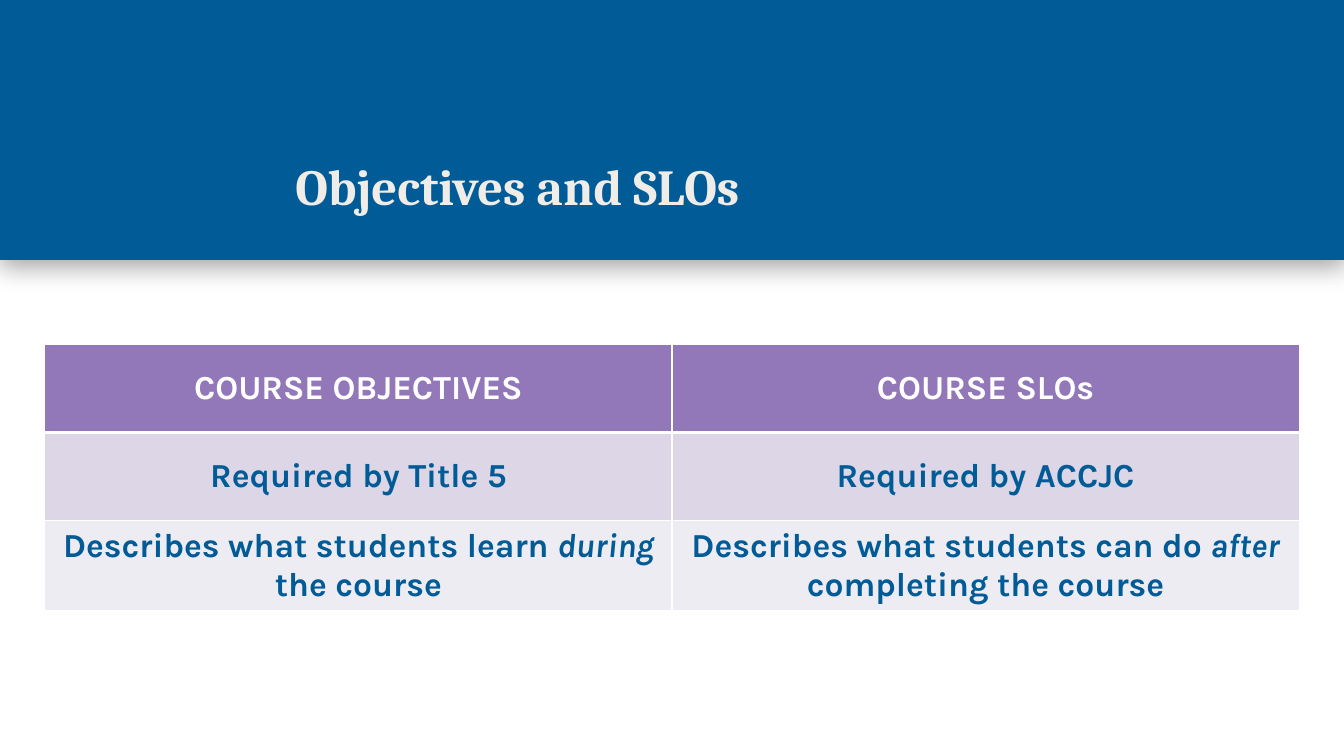
from lxml import etree
from pptx import Presentation
from pptx import util as u
from pptx.dml.color import RGBColor
from pptx.enum import shapes, text
from pptx.oxml import parse_xml
from pptx.oxml.ns import nsdecls, qn

COLORS = {
    "blue": "005B96",
    "cream": "F0ECE8",
    "white": "FFFFFF",
    "black": "000000",
    "purple": "9277B9",
    "lilac": "DCD6E6",
    "pale": "EEECF3",
}
WIDTH, HEIGHT = 960, 540

# Each cell is a list of (wording, italic) spans.
ROWS = [
    [[("COURSE OBJECTIVES", False)], [("COURSE SLOs", False)]],
    [[("Required by Title 5", False)], [("Required by ACCJC", False)]],
    [
        [("Describes what students learn ", False), ("during", True),
         (" the course", False)],
        [("Describes what students can do ", False), ("after", True),
         (" completing the course", False)],
    ],
]
ROW_STYLES = [("purple", "white"), ("lilac", "blue"), ("pale", "blue")]


def rgb(name):
    return RGBColor.from_string(COLORS[name])


class SlideBuilder:
    heading_font = "Cambria"
    body_font = "Karla"

    def __init__(self, page):
        self.page = page

    def band(self, height):
        """Full-width header band with a soft shadow below it."""
        band = self.page.shapes.add_shape(
            shapes.MSO_SHAPE.RECTANGLE, 0, 0, u.Pt(WIDTH), u.Pt(height))
        band.fill.solid()
        band.fill.fore_color.rgb = rgb("blue")
        band.line.fill.background()
        band.shadow.inherit = False
        effects = band._element.spPr.find(qn("a:effectLst"))
        effects.append(parse_xml(
            f'<a:outerShdw {nsdecls("a")} blurRad="{u.Pt(18)}" dist="{u.Pt(5)}" '
            f'dir="5400000" rotWithShape="0"><a:srgbClr val="{COLORS["black"]}">'
            '<a:alpha val="35000"/></a:srgbClr></a:outerShdw>'))

    def title(self, wording, left, top, width, height):
        box = self.page.shapes.add_textbox(*map(u.Pt, (left, top, width, height)))
        frame = box.text_frame
        frame.word_wrap = True
        frame.vertical_anchor = text.MSO_ANCHOR.BOTTOM
        frame.margin_left = frame.margin_right = u.Pt(9.36)
        frame.margin_top = frame.margin_bottom = u.Pt(9.36)
        para = frame.paragraphs[0]
        para.text = wording
        para.line_spacing = 0.9
        self.set_font(para, self.heading_font, 36, "cream")

    def table(self, left, top, column_width, row_height):
        columns = len(ROWS[0])
        table = self.page.shapes.add_table(
            len(ROWS), columns, u.Pt(left), u.Pt(top),
            u.Pt(column_width * columns), u.Pt(row_height * len(ROWS))).table
        table.first_row = table.horz_banding = False
        for column in table.columns:
            column.width = u.Pt(column_width)
        for index, (row, (fill, color)) in enumerate(zip(ROWS, ROW_STYLES)):
            table.rows[index].height = u.Pt(row_height)
            top_line = 3 if index == 1 else 1
            bottom_line = 3 if index == 0 else 1
            for cell, spans in zip(table.rows[index].cells, row):
                self.borders(cell, L=1, R=1, T=top_line, B=bottom_line)
                self.cell(cell, spans, fill, color)

    def cell(self, cell, spans, fill, color):
        cell.fill.solid()
        cell.fill.fore_color.rgb = rgb(fill)
        cell.vertical_anchor = text.MSO_ANCHOR.MIDDLE
        para = cell.text_frame.paragraphs[0]
        para.alignment = text.PP_ALIGN.CENTER
        for wording, italic in spans:
            span = para.add_run()
            span.text = wording
            if italic:
                span.font.italic = True
        self.set_font(para, self.body_font, 24, color)

    def borders(self, cell, **widths):
        properties = cell._tc.get_or_add_tcPr()
        for side, width in widths.items():
            line = etree.SubElement(
                properties, qn(f"a:ln{side}"), w=str(u.Pt(width)))
            fill = etree.SubElement(line, qn("a:solidFill"))
            etree.SubElement(fill, qn("a:srgbClr"), val=COLORS["white"])

    def set_font(self, para, name, size, color):
        font = para.font
        font.name = name
        font.size = u.Pt(size)
        font.bold = True
        font.color.rgb = rgb(color)


def main():
    deck = Presentation()
    deck.slide_width, deck.slide_height = u.Pt(WIDTH), u.Pt(HEIGHT)
    builder = SlideBuilder(deck.slides.add_slide(deck.slide_layouts[6]))
    builder.band(185.6)
    builder.title("Objectives and SLOs", 201.6, 31.7, 692.6, 132.5)
    builder.table(left=32, top=246.3, column_width=448, row_height=62.7)
    deck.save("out.pptx")


if __name__ == "__main__":
    main()
